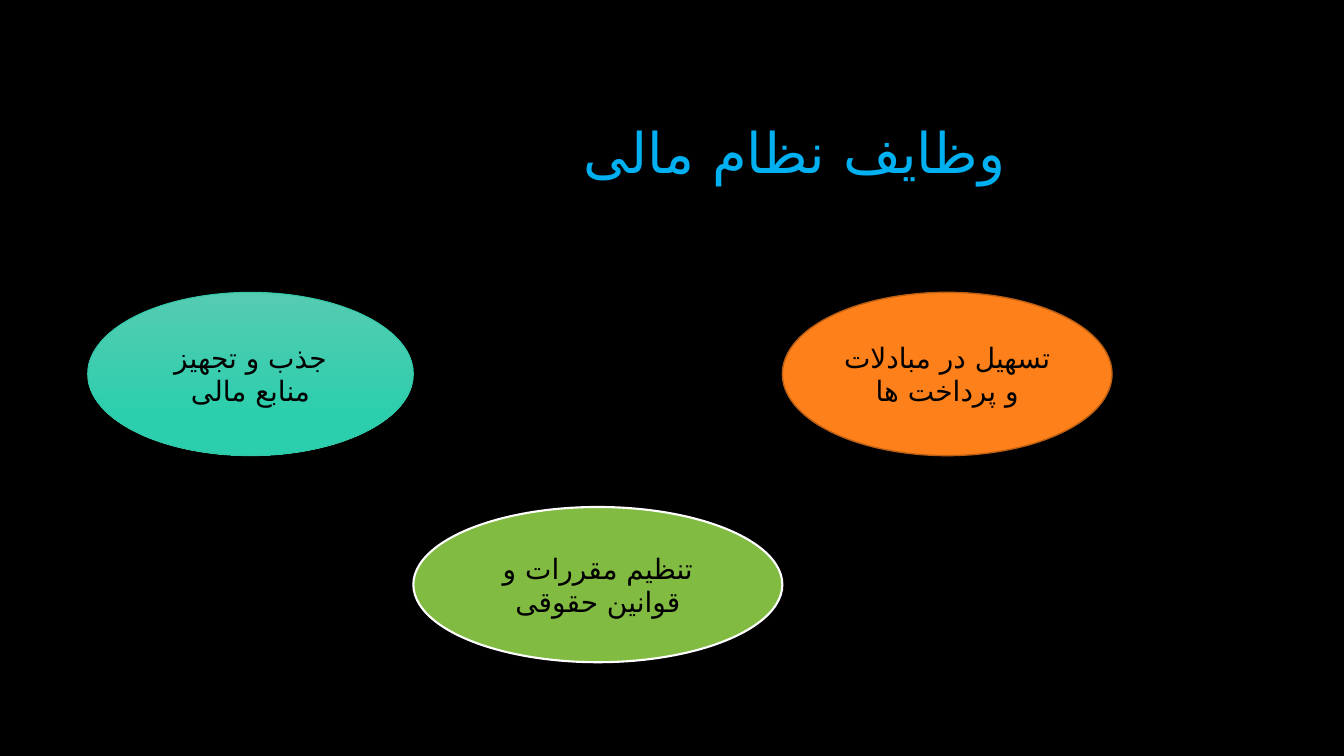
from pptx import Presentation
from pptx.dml.color import RGBColor
from pptx.enum.shapes import MSO_SHAPE
from pptx.enum.text import MSO_ANCHOR, PP_ALIGN
from pptx.oxml.ns import qn
from pptx.util import Inches, Pt

OVAL = MSO_SHAPE.OVAL
MIDDLE = MSO_ANCHOR.MIDDLE
CENTER = PP_ALIGN.CENTER
FONT = "Quicksand"
PERSIAN_FONT = "DejaVu Sans"
BLANK_LAYOUT = 6

# left, top, width, height, text, fill stops (position, colour), line colour, line width
FUNCTIONS = [
    (7.76, 2.9, 3.27, 1.62, "تسهیل در مبادلات و پرداخت ها",
     [(0, "FE801A")], "BC5F13", 1),
    (0.87, 2.9, 3.23, 1.62, "جذب و تجهیز منابع مالی",
     [(0, "55CCB1"), (0.78, "2BCEAD")], "32C7A9", 0.75),
    (4.1, 5.03, 3.66, 1.54, "تنظیم مقررات و قوانین حقوقی",
     [(0, "81BB42")], "FFFFFF", 1.5),
]


def color(hex_value):
    return RGBColor.from_string(hex_value)


def write_text(frame, text, size, text_color, line_spacing=1.0):
    """Write one centred right-to-left paragraph."""
    frame.word_wrap = True
    frame.vertical_anchor = MIDDLE
    paragraph = frame.paragraphs[0]
    paragraph.alignment = CENTER
    paragraph.line_spacing = line_spacing
    paragraph._p.get_or_add_pPr().set("rtl", "1")
    run = paragraph.add_run()
    run.text = text
    run.font.size = Pt(size)
    run.font.name = FONT
    run.font.color.rgb = color(text_color)
    run_properties = run._r.get_or_add_rPr()
    run_properties.append(run_properties.makeelement(qn("a:cs"), {"typeface": PERSIAN_FONT}))


def fill_shape(fill, stops):
    """Fill with one colour, or with a top-to-bottom gradient for two stops."""
    if len(stops) == 1:
        fill.solid()
        fill.fore_color.rgb = color(stops[0][1])
        return
    fill.gradient()
    fill.gradient_angle = 270
    for gradient_stop, (position, hex_value) in zip(fill.gradient_stops, stops):
        gradient_stop.position = position
        gradient_stop.color.rgb = color(hex_value)


def add_title(slide, text):
    title = slide.shapes.add_textbox(Inches(3.17), Inches(0.84), Inches(9.42), Inches(1.41))
    write_text(title.text_frame, text, 40, "00B0F0", line_spacing=0.9)


def add_function_oval(slide, left, top, width, height, text, stops, line_color, line_width):
    oval = slide.shapes.add_shape(OVAL, Inches(left), Inches(top), Inches(width), Inches(height))
    oval.shadow.inherit = False
    fill_shape(oval.fill, stops)
    oval.line.color.rgb = color(line_color)
    oval.line.width = Pt(line_width)
    write_text(oval.text_frame, text, 20, "000000")


def main():
    presentation = Presentation()
    presentation.slide_width = Inches(13.33)
    presentation.slide_height = Inches(7.5)
    slide = presentation.slides.add_slide(presentation.slide_layouts[BLANK_LAYOUT])
    slide.background.fill.solid()
    slide.background.fill.fore_color.rgb = color("000000")

    add_title(slide, "وظایف نظام مالی")
    for function in FUNCTIONS:
        add_function_oval(slide, *function)

    presentation.save("out.pptx")


if __name__ == "__main__":
    main()
